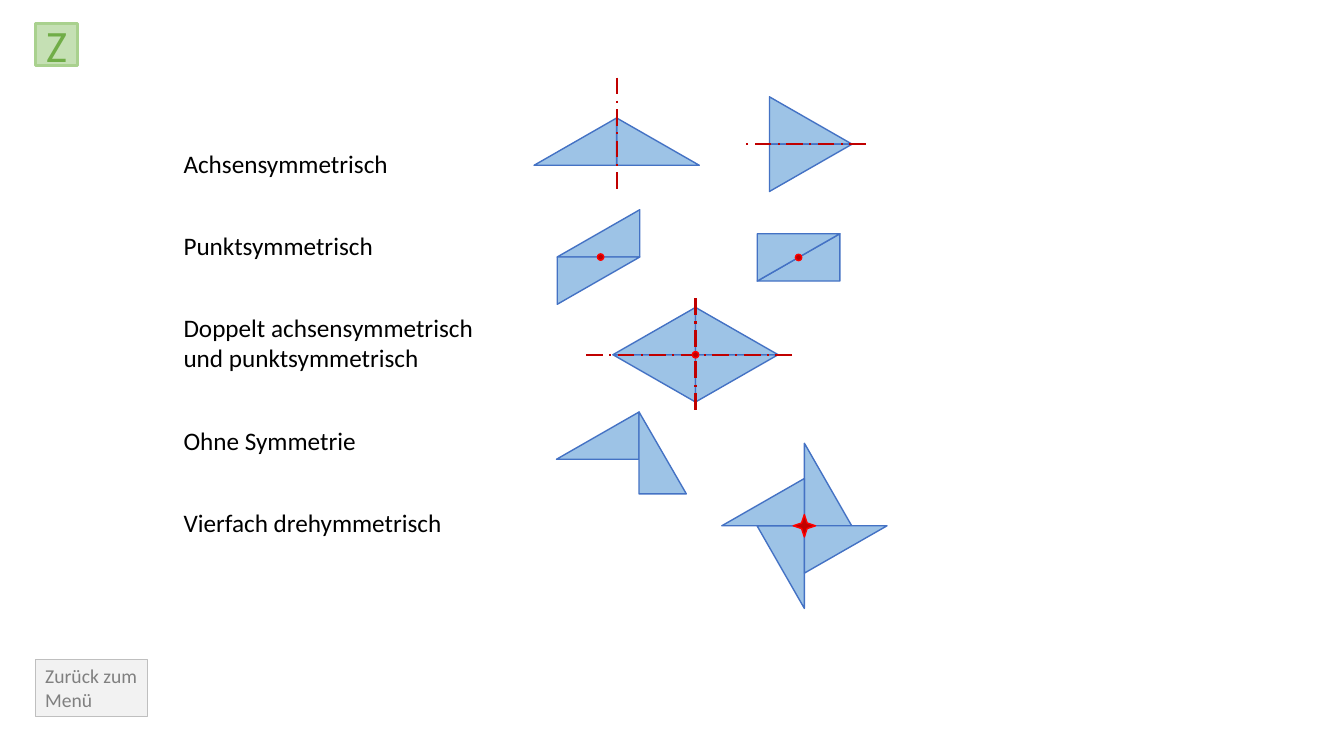
import pptx
import pptx.util
import pptx.dml.color
import pptx.enum.dml
import pptx.enum.shapes
import pptx.enum.text
import pptx.oxml

Pt = pptx.util.Pt
RGBColor = pptx.dml.color.RGBColor
MSO_SHAPE = pptx.enum.shapes.MSO_SHAPE
ALIGN = pptx.enum.text.PP_ALIGN
ANCHOR = pptx.enum.text.MSO_ANCHOR

BLACK = RGBColor(0x00, 0x00, 0x00)
TRIANGLE_FILL = RGBColor(0x9D, 0xC3, 0xE6)
TRIANGLE_LINE = RGBColor(0x44, 0x72, 0xC4)
DARK_RED = RGBColor(0xC0, 0x00, 0x00)
RED = RGBColor(0xFF, 0x00, 0x00)
LETTER_FILL = RGBColor(0xC5, 0xE0, 0xB4)
LETTER_LINE = RGBColor(0xA9, 0xD1, 0x8E)
LETTER_TEXT = RGBColor(0x70, 0xAD, 0x47)
MENU_FILL = RGBColor(0xF2, 0xF2, 0xF2)
MENU_LINE = RGBColor(0xBF, 0xBF, 0xBF)
MENU_TEXT = RGBColor(0x80, 0x80, 0x80)

LONG_LEG = 59
SHORT_LEG = 33.8
SHARE = SHORT_LEG / LONG_LEG / 2
LABEL_STEP = 58.7
LINE_HEIGHT = 22

LABELS = [
    ["Achsensymmetrisch"],
    ["Punktsymmetrisch"],
    ["Doppelt achsensymmetrisch", "und punktsymmetrisch"],
    ["Ohne Symmetrie"],
    ["Vierfach drehymmetrisch"],
]


def paint(shape, fill, line, width):
    shape.shadow.inherit = False
    shape.fill.solid()
    shape.fill.fore_color.rgb = fill
    shape.line.color.rgb = line
    shape.line.width = Pt(width)


def write(frame, lines, size, color, alignment=ALIGN.LEFT):
    frame.word_wrap = True
    for index, line in enumerate(lines):
        paragraph = frame.paragraphs[0] if index == 0 else frame.add_paragraph()
        paragraph.alignment = alignment
        run = paragraph.add_run()
        run.text = line
        run.font.color.rgb = color
        for name, value in {"name": "Calibri", "size": Pt(size)}.items():
            setattr(run.font, name, value)


def draw_button(slide, box, text, size, colors, width, alignment, anchor):
    fill, line, text_color = colors
    button = slide.shapes.add_shape(MSO_SHAPE.RECTANGLE, *map(Pt, box))
    paint(button, fill, line, width)
    write(button.text_frame, [text], size, text_color, alignment)
    button.text_frame.vertical_anchor = anchor


def draw_labels(slide, left, top, width):
    for lines in LABELS:
        extra = LINE_HEIGHT * (len(lines) - 1)
        label = slide.shapes.add_textbox(Pt(left), Pt(top), Pt(width), Pt(29 + extra))
        write(label.text_frame, lines, 18, BLACK)
        top += LABEL_STEP + extra


def draw_axis(shapes, start, end):
    axis = shapes.add_connector(
        pptx.enum.shapes.MSO_CONNECTOR.STRAIGHT, *map(Pt, start + end))
    axis.line.color.rgb = DARK_RED
    axis.line.width = Pt(1.5)
    axis.line.dash_style = pptx.enum.dml.MSO_LINE.LONG_DASH_DOT
    properties = axis._element.spPr
    properties.append(pptx.oxml.parse_xml(
        '<a:effectLst xmlns:a="http://schemas.openxmlformats.org/drawingml/2006/main"/>'))


def draw_figure(slide, box, triangles, across=None, upright=None, mark=None):
    left, top, width, height = box
    shapes = slide.shapes.add_group_shape().shapes

    def place(x, y):
        return Pt(left + x * width), Pt(top + y * height)

    for corner_x, corner_y, tip_x, tip_y in triangles:
        builder = shapes.build_freeform(*place(corner_x, tip_y))
        builder.add_line_segments(
            [place(tip_x, corner_y), place(corner_x, corner_y)], close=True)
        paint(builder.convert_to_shape(), TRIANGLE_FILL, TRIANGLE_LINE, 1)

    middle_x, middle_y = left + width / 2, top + height / 2
    if across:
        before, after = across
        draw_axis(shapes, (left + width + after, middle_y), (left - before, middle_y))
    if upright:
        before, after = upright
        draw_axis(shapes, (middle_x, top - before), (middle_x, top + height + after))
    if mark:
        kind, size, shift = mark
        center = shapes.add_shape(
            kind, Pt(middle_x + shift - size / 2), Pt(middle_y - size / 2),
            Pt(size), Pt(size))
        paint(center, DARK_RED, RED, 1)
        if kind == MSO_SHAPE.STAR_4_POINT:
            center.adjustments[0] = 0.177


def draw_figures(slide):
    wide, tall = 2 * LONG_LEG, 2 * SHORT_LEG
    dot = MSO_SHAPE.OVAL
    draw_figure(slide, (549.6, 69.2, LONG_LEG, tall),
                [(0, 0.5, 1, 0), (0, 0.5, 1, 1)], across=(19, 10))
    draw_figure(slide, (381.5, 84.3, wide, SHORT_LEG),
                [(0.5, 1, 1, 0), (0.5, 1, 0, 0)], upright=(28.9, 18.7))
    draw_figure(slide, (398, 149.8, LONG_LEG, tall),
                [(1, 0.5, 0, 0), (0, 0.5, 1, 1)], mark=(dot, 4.5, 1.5))
    draw_figure(slide, (540.9, 167, LONG_LEG, SHORT_LEG),
                [(1, 1, 0, 0), (0, 0, 1, 1)], mark=(dot, 4.5, 0))
    draw_figure(slide, (437.8, 219.6, wide, tall),
                [(0.5, 0.5, x, y) for x in (0, 1) for y in (1, 0)],
                across=(23, 10), upright=(6.5, 7.2), mark=(dot, 4.5, 0))
    pair_width, pair_height = LONG_LEG + SHORT_LEG, 58.5
    joint = LONG_LEG / pair_width
    draw_figure(slide, (397.5, 294.3, pair_width, pair_height),
                [(joint, SHORT_LEG / pair_height, 0, 0), (joint, 1, 1, 0)])
    draw_figure(slide, (515.6, 316.6, wide, wide),
                [(0.5, 0.5, 0.5 + SHARE, 0), (0.5, 0.5, 0, 0.5 - SHARE),
                 (0.5, 0.5, 0.5 - SHARE, 1), (0.5, 0.5, 1, 0.5 + SHARE)],
                mark=(MSO_SHAPE.STAR_4_POINT, 16, 0))


def main():
    presentation = pptx.Presentation()
    presentation.slide_width = Pt(960)
    presentation.slide_height = Pt(540)
    slide = presentation.slides.add_slide(presentation.slide_layouts[6])
    draw_button(slide, (25.2, 17, 30.5, 29.8), "Z", 32,
                (LETTER_FILL, LETTER_LINE, LETTER_TEXT), 2.25,
                ALIGN.CENTER, ANCHOR.MIDDLE)
    draw_button(slide, (25.2, 470.8, 80, 41.2), "Zurück zum Menü", 14,
                (MENU_FILL, MENU_LINE, MENU_TEXT), 0.75,
                ALIGN.LEFT, ANCHOR.TOP)
    draw_labels(slide, 124, 102.2, 242)
    draw_figures(slide)
    presentation.save("out.pptx")


if __name__ == "__main__":
    main()
